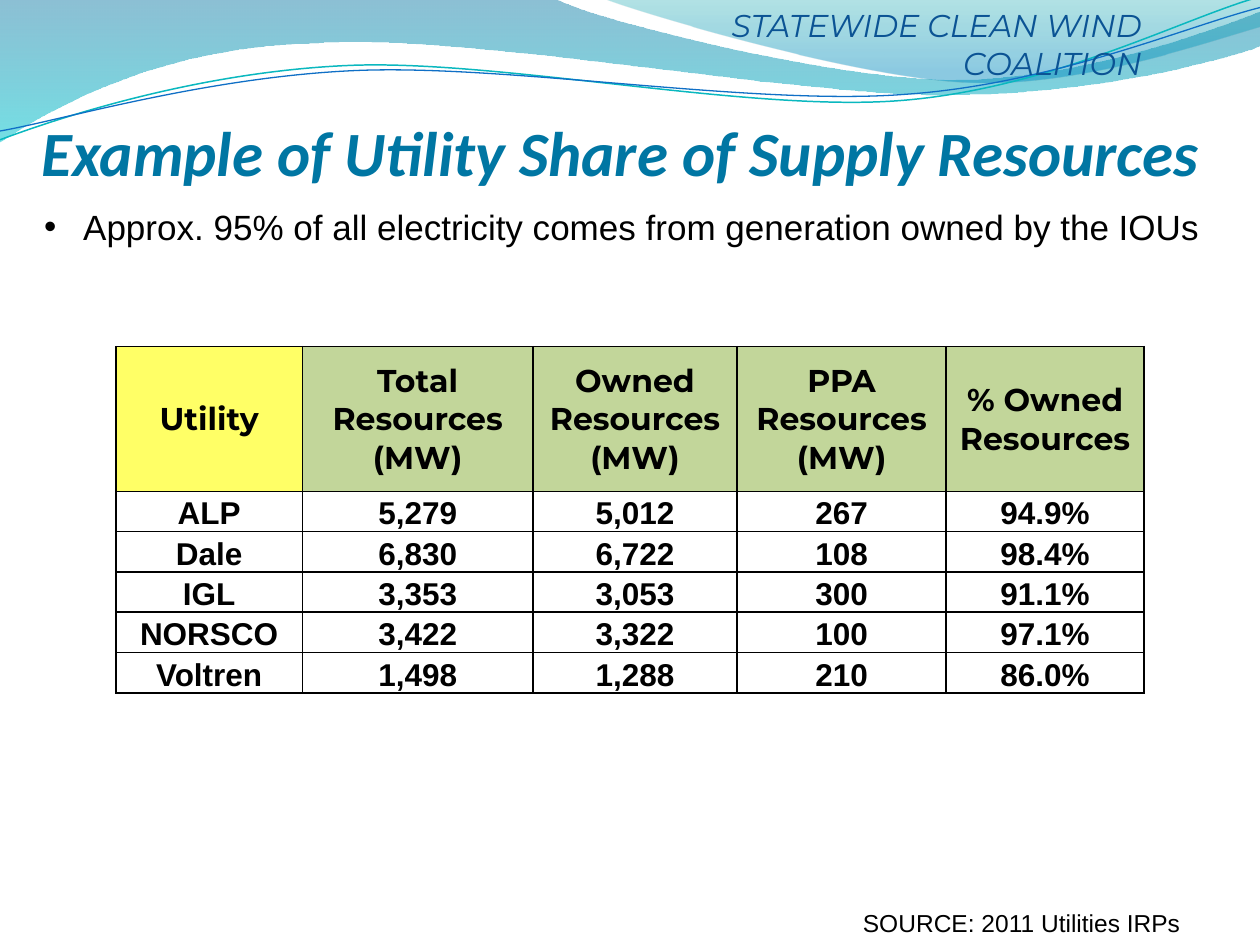
import pptx
import pptx.dml.color
import pptx.enum.text
import pptx.oxml
import pptx.oxml.ns
import pptx.util
from pptx.oxml.ns import nsdecls, qn
from pptx.util import Inches

ALIGN = pptx.enum.text.PP_ALIGN
ANCHOR = pptx.enum.text.MSO_ANCHOR
COLORS = {
    "black": "000000", "title": "0076A3", "coalition": "0B5394",
    "key": "FFFF66", "header": "C2D69A",
    "teal_line": "0AB8BF", "blue_line": "0F6FC6",
    "deep": "0074A1", "cyan": "00C6CF", "teal": "00A1A9", "sky": "008BBF",
}
# Bands: start, pieces (1 point = line, 3 points = Bezier curve), gradient stops (position, colour, alpha %)
BANDS = [
    ((0, 0), [[(4.4, -0.01)], [(4.76, 0.17), (6.64, 0.63), (7.58, 0.63)],
              [(8.53, 0.63), (9.58, 0.26), (10, 0.09)], [(10.01, 0.36)],
              [(9.83, 0.44), (8.7, 0.76), (7.46, 0.75)],
              [(6.22, 0.75), (3.82, 0.28), (2.57, 0.34)],
              [(1.29, 0.36), (0.46, 0.83), (-0.01, 1.13)], [(0, 0)]],
     [(0, "deep", 45), (1, "cyan", 55)]),
    ((4.79, -0.01), [[(5.09, 0.11), (6.82, 0.62), (7.69, 0.65)],
                     [(8.56, 0.69), (9.61, 0.32), (10, 0.21)], [(10, 0)], [(4.79, -0.01)]],
     [(0, "teal", 30), (0.8, "sky", 45)]),
]
# Lines: start, pieces, colour, width in points
LINES = [
    ((0, 1.11), [[(0.48, 0.93), (1.58, 0.57), (2.77, 0.52)],
                 [(3.95, 0.47), (5.93, 0.89), (7.13, 0.8)],
                 [(8.33, 0.71), (9.38, 0.15), (9.98, -0.02)]], "teal_line", 0.85),
    ((0, 1.04), [[(0.47, 0.96), (1.64, 0.61), (2.83, 0.56)],
                 [(4.03, 0.51), (5.97, 0.84), (7.17, 0.75)],
                 [(8.36, 0.67), (9.41, 0.21), (10, 0.06)]], "blue_line", 0.75),
]
COLUMNS = [1.48, 1.83, 1.62, 1.66, 1.57]
ROWS = [
    ("Utility", "Total Resources (MW)", "Owned Resources (MW)", "PPA Resources (MW)",
     "% Owned Resources"),
    ("ALP", "5,279", "5,012", "267", "94.9%"),
    ("Dale", "6,830", "6,722", "108", "98.4%"),
    ("IGL", "3,353", "3,053", "300", "91.1%"),
    ("NORSCO", "3,422", "3,322", "100", "97.1%"),
    ("Voltren", "1,498", "1,288", "210", "86.0%"),
]


def rgb(name):
    return pptx.dml.color.RGBColor.from_string(COLORS[name])


def place(sp, left, top, width, height):
    sp.left, sp.top = Inches(left), Inches(top)
    sp.width, sp.height = Inches(width), Inches(height)


def write(tf, text, size, font, color, bold=False, italic=False, align=ALIGN.LEFT):
    tf.text = text
    p = tf.paragraphs[0]
    p.alignment = align
    f = p.font
    f.size, f.name, f.bold, f.italic = pptx.util.Pt(size), font, bold, italic
    f.color.rgb = rgb(color)
    return p


def add_curve(s, start, pieces, close):
    """Build an outline through all points, then join each three-point piece into a Bezier curve."""
    builder = s.shapes.build_freeform(Inches(start[0]), Inches(start[1]))
    points = [(Inches(x), Inches(y)) for piece in pieces for x, y in piece]
    builder.add_line_segments(points, close=close)
    sp = builder.convert_to_shape()
    sp.shadow.inherit = False
    segments = iter(list(sp._element.iter(qn("a:lnTo"))))
    for piece in pieces:
        first, *rest = [next(segments) for _ in piece]
        if rest:
            curve = pptx.oxml.parse_xml(f'<a:cubicBezTo {nsdecls("a")}/>')
            first.addprevious(curve)
            for segment in (first, *rest):
                curve.append(segment[0])
                segment.getparent().remove(segment)
    return sp


def add_waves(s):
    """Draw the header waves behind the placeholders."""
    waves = []
    for start, pieces, stops in BANDS:
        sp = add_curve(s, start, pieces, True)
        sp.line.fill.background()
        sp.fill.gradient()
        sp.fill.gradient_angle = 270
        for stop, (position, color, _) in zip(sp.fill.gradient_stops, stops):
            stop.position = position
            stop.color.rgb = rgb(color)
        colors = sp._element.spPr.iter(qn("a:srgbClr"))
        for clr, (_, _, alpha) in zip(colors, stops):
            clr.append(pptx.oxml.parse_xml(f'<a:alpha {nsdecls("a")} val="{alpha * 1000}"/>'))
        waves.append(sp)
    for start, pieces, color, width in LINES:
        sp = add_curve(s, start, pieces, False)
        sp.fill.background()
        sp.line.color.rgb = rgb(color)
        sp.line.width = pptx.util.Pt(width)
        waves.append(sp)
    for i, sp in enumerate(waves):
        s.shapes._spTree.insert(2 + i, sp._element)


def add_title(s, left, top, width, height):
    sp = s.shapes.title
    place(sp, left, top, width, height)
    tf = sp.text_frame
    tf.auto_size = pptx.enum.text.MSO_AUTO_SIZE.NONE
    tf.vertical_anchor = ANCHOR.BOTTOM
    tf.margin_left = tf.margin_right = tf.margin_bottom = 0
    write(tf, "Example of Utility Share of Supply Resources", 36, "Calibri", "title",
          bold=True, italic=True)


def add_bullet(s, left, top, width, height):
    sp = s.placeholders[1]
    place(sp, left, top, width, height)
    sp.text_frame.auto_size = pptx.enum.text.MSO_AUTO_SIZE.NONE
    p = write(sp.text_frame,
              "Approx. 95% of all electricity comes from generation owned by the IOUs",
              20, "Arial", "black")
    p.space_before = 0
    pPr = p._p.get_or_add_pPr()
    pPr.set("marL", str(Inches(0.31)))
    pPr.set("indent", str(Inches(-0.31)))


def add_label(s, left, top, width, height, text, **style):
    tf = s.shapes.add_textbox(*map(Inches, (left, top, width, height))).text_frame
    tf.word_wrap = True
    write(tf, text, **style)


def set_borders(cell):
    tcPr = cell._tc.get_or_add_tcPr()
    for i, side in enumerate("LRTB"):
        tcPr.insert(i, pptx.oxml.parse_xml(
            f'<a:ln{side} {nsdecls("a")} w="{pptx.util.Pt(1)}"><a:solidFill>'
            f'<a:srgbClr val="{COLORS["black"]}"/></a:solidFill></a:ln{side}>'))


def add_resource_table(s, left, top, width, height, header_height=1.15):
    table = s.shapes.add_table(len(ROWS), len(COLUMNS),
                               *map(Inches, (left, top, width, height))).table
    for column, column_width in zip(table.columns, COLUMNS):
        column.width = Inches(column_width)
    body_height = (height - header_height) / (len(ROWS) - 1)
    for r, values in enumerate(ROWS):
        is_header = r == 0
        table.rows[r].height = Inches(header_height if is_header else body_height)
        for c, value in enumerate(values):
            cell = table.cell(r, c)
            cell.margin_left = cell.margin_right = cell.margin_top = Inches(0.01)
            cell.margin_bottom = 0
            cell.vertical_anchor = ANCHOR.MIDDLE if is_header else ANCHOR.BOTTOM
            write(cell.text_frame, value, 18, "Montserrat" if is_header else "Arial", "black",
                  bold=True, align=ALIGN.CENTER)
            if is_header:
                cell.fill.solid()
                cell.fill.fore_color.rgb = rgb("key" if c == 0 else "header")
            else:
                cell.fill.background()
            set_borders(cell)


def main():
    prs = pptx.Presentation()
    prs.slide_width, prs.slide_height = Inches(10), Inches(7.5)
    s = prs.slides.add_slide(prs.slide_layouts[1])
    add_waves(s)
    add_title(s, 0.33, 0.92, 9.67, 0.58)
    add_label(s, 5.08, 0, 4.08, 0.71, "STATEWIDE CLEAN WIND COALITION", size=18,
              font="Montserrat", color="coalition", italic=True, align=ALIGN.RIGHT)
    add_resource_table(s, 0.92, 2.75, 8.17, 2.75)
    add_label(s, 6.75, 7.16, 3, 0.34, "SOURCE: 2011 Utilities IRPs", size=14,
              font="Arial", color="black")
    add_bullet(s, 0.25, 1.58, 9.75, 0.44)
    prs.save("out.pptx")


if __name__ == "__main__":
    main()
